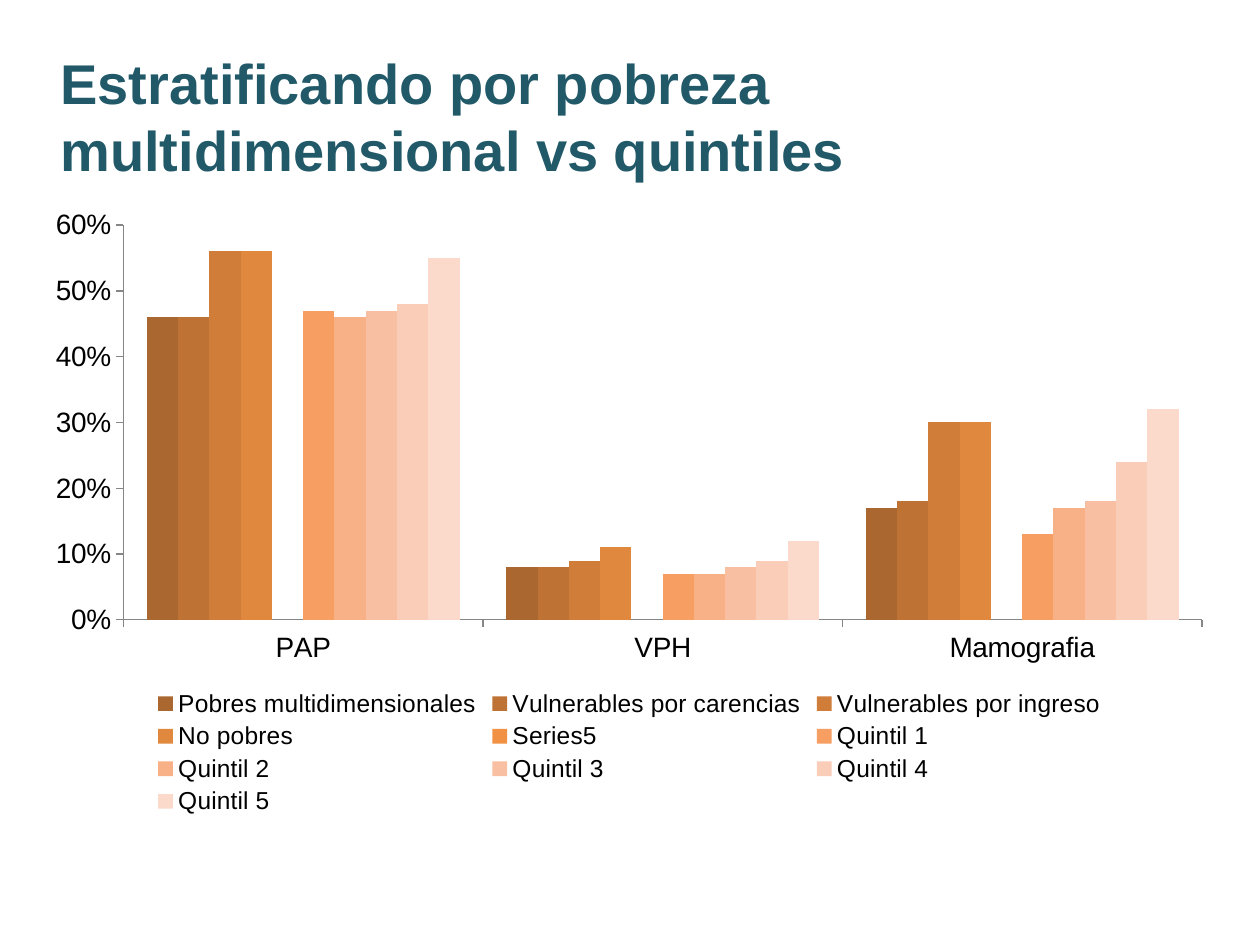
"""Build a slide comparing screening coverage by multidimensional poverty and by quintile."""
from lxml.etree import SubElement
from pptx import Presentation
from pptx.chart.data import CategoryChartData
from pptx.dml.color import RGBColor
from pptx.enum.chart import XL_CHART_TYPE, XL_LEGEND_POSITION, XL_TICK_MARK
from pptx.enum.text import MSO_ANCHOR, PP_ALIGN
from pptx.oxml import parse_xml
from pptx.oxml.ns import nsdecls, qn
from pptx.util import Inches, Pt

FONT = "Arial"
COLORS = {"title": "215968", "text": "000000", "axis": "868686"}
CATEGORIES = ["PAP", "VPH", "Mamografia"]
SERIES = [
    ("Pobres multidimensionales", "AA672F", (0.46, 0.08, 0.17)),
    ("Vulnerables por carencias", "BE7234", (0.46, 0.08, 0.18)),
    ("Vulnerables por ingreso", "D07D39", (0.56, 0.09, 0.30)),
    ("No pobres", "E0883E", (0.56, 0.11, 0.30)),
    ("Series5", "F09143", (None, None, None)),
    ("Quintil 1", "F79E62", (0.47, 0.07, 0.13)),
    ("Quintil 2", "F8B086", (0.46, 0.07, 0.17)),
    ("Quintil 3", "F9BFA2", (0.47, 0.08, 0.18)),
    ("Quintil 4", "FACDB9", (0.48, 0.09, 0.24)),
    ("Quintil 5", "FBDACC", (0.55, 0.12, 0.32)),
]
PLOT_SHARES = {"x": 0.076, "y": 0.044, "w": 0.904, "h": 0.634}


def style_font(font, size, color, bold=False):
    font.name = FONT
    font.size = Pt(size)
    font.bold = bold
    font.color.rgb = RGBColor.from_string(color)


presentation = Presentation()
presentation.slide_width = Inches(10)
presentation.slide_height = Inches(7.5)
slide = presentation.slides.add_slide(presentation.slide_layouts[5])

title = slide.shapes.title
title.left, title.top = Inches(0.38), Inches(0.29)
title.width, title.height = Inches(9), Inches(1.25)
title.text_frame.text = "Estratificando por pobreza multidimensional vs quintiles"
title.text_frame.word_wrap = True
title.text_frame.vertical_anchor = MSO_ANCHOR.MIDDLE
paragraph = title.text_frame.paragraphs[0]
paragraph.alignment = PP_ALIGN.LEFT
style_font(paragraph.runs[0].font, 32, COLORS["title"], bold=True)

chart_data = CategoryChartData(number_format="0%")
chart_data.categories = CATEGORIES
for name, color, values in SERIES:
    chart_data.add_series(name, values)
chart = slide.shapes.add_chart(
    XL_CHART_TYPE.COLUMN_CLUSTERED,
    Inches(0.26), Inches(1.57), Inches(9.47), Inches(4.94), chart_data,
).chart
chart.has_title = False
style_font(chart.font, 16, COLORS["text"])

plot = chart.plots[0]
plot.gap_width = 150
plot.overlap = 0
plot.vary_by_categories = False
for series, (name, color, values) in zip(plot.series, SERIES):
    series.format.fill.solid()
    series.format.fill.fore_color.rgb = RGBColor.from_string(color)

for axis in (chart.category_axis, chart.value_axis):
    axis.has_major_gridlines = False
    axis.major_tick_mark = XL_TICK_MARK.OUTSIDE
    axis.minor_tick_mark = XL_TICK_MARK.NONE
    axis.format.line.color.rgb = RGBColor.from_string(COLORS["axis"])
    axis.format.line.width = Pt(0.75)
    style_font(axis.tick_labels.font, 16, COLORS["text"])
value_axis = chart.value_axis
value_axis.minimum_scale, value_axis.maximum_scale = 0, 0.6
value_axis.major_unit = 0.1
value_axis.tick_labels.number_format = "0%"
value_axis.tick_labels.number_format_is_linked = False

chart.has_legend = True
chart.legend.position = XL_LEGEND_POSITION.BOTTOM
chart.legend.include_in_layout = False
style_font(chart.legend.font, 14, COLORS["text"])

plot_area = chart.element.find(".//" + qn("c:plotArea"))
for automatic_layout in plot_area.findall(qn("c:layout")):
    plot_area.remove(automatic_layout)
layout = parse_xml(f"<c:layout {nsdecls('c')}><c:manualLayout/></c:layout>")
settings = {"layoutTarget": "inner", "xMode": "edge", "yMode": "edge", **PLOT_SHARES}
for tag, value in settings.items():
    SubElement(layout[0], qn(f"c:{tag}")).set("val", str(value))
plot_area.insert(0, layout)

presentation.save("out.pptx")
